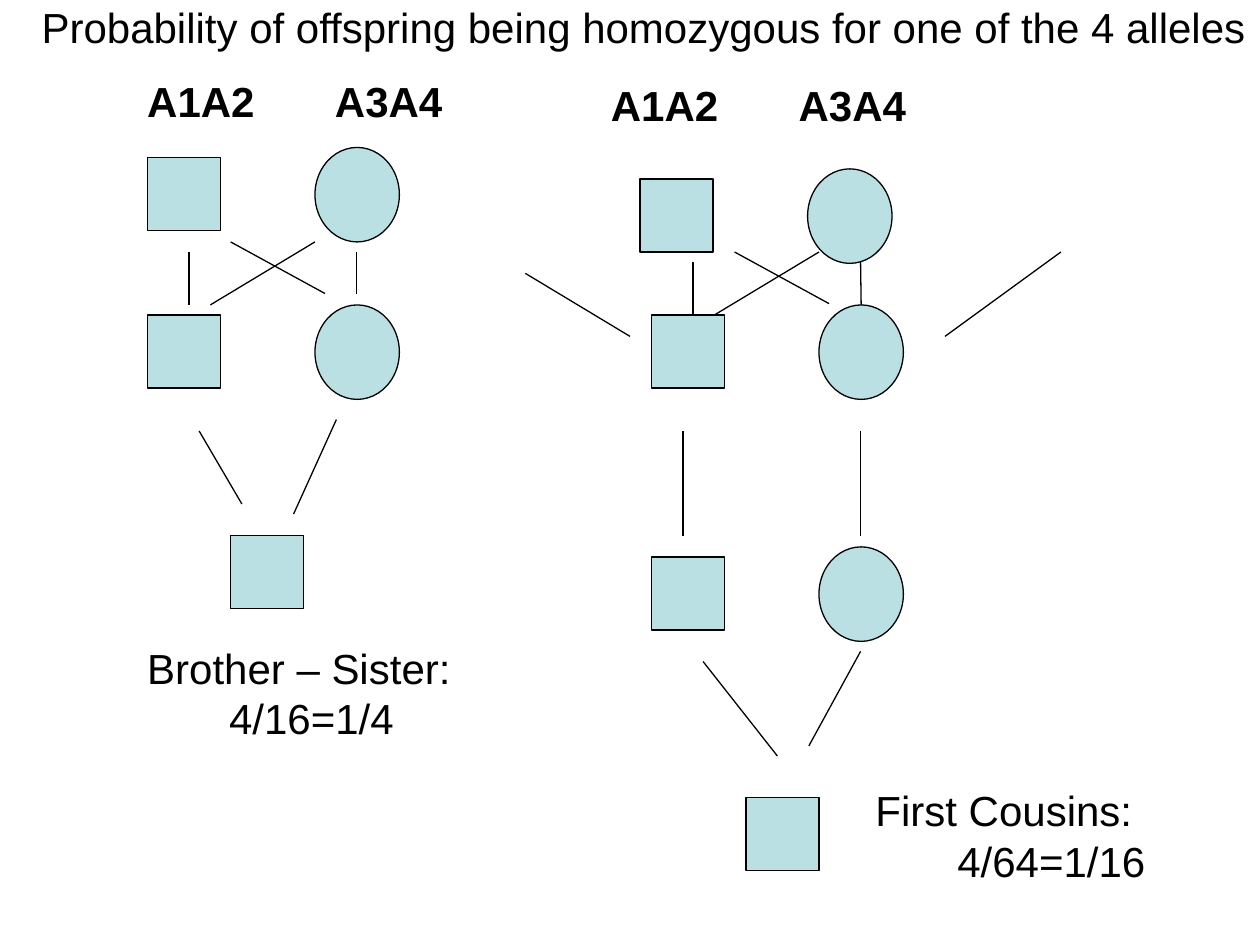
import pptx
import pptx.dml.color
import pptx.enum.shapes
import pptx.enum.text
import pptx.oxml
import pptx.oxml.ns
import pptx.util
from lxml import etree
from pptx.util import Inches

MSO = pptx.enum.shapes.MSO_SHAPE


def color(hex_code):
    return pptx.dml.color.RGBColor.from_string(hex_code)


def write(frame, *lines, bold=False, size=24, indent=0, tab=None, wrap=True):
    """Fill a frame; lines after the first are indented."""
    frame.word_wrap = wrap
    frame.auto_size = pptx.enum.text.MSO_AUTO_SIZE.NONE
    frame.vertical_anchor = pptx.enum.text.MSO_ANCHOR.TOP
    for number, line in enumerate(lines):
        paragraph = frame.paragraphs[0] if number == 0 else frame.add_paragraph()
        paragraph.text = line
        paragraph.alignment = pptx.enum.text.PP_ALIGN.LEFT
        properties = paragraph._p.get_or_add_pPr()
        if number and indent:
            properties.set("marL", str(Inches(indent)))
        if tab:
            stops = etree.SubElement(properties, pptx.oxml.ns.qn("a:tabLst"))
            etree.SubElement(stops, pptx.oxml.ns.qn("a:tab"),
                             pos=str(Inches(tab)), algn="l")
        paragraph.font.name = "Arial"
        paragraph.font.size = pptx.util.Pt(size)
        paragraph.font.bold = bold
        paragraph.font.color.rgb = color("000000")


class Pedigree:
    fill, ink, stroke = "BBE0E3", "000000", 0.75
    side = 0.58
    oval = (0.67, 0.75)

    def __init__(self, slide):
        self.slide = slide

    def outline(self, line):
        line.color.rgb = color(self.ink)
        line.width = pptx.util.Pt(self.stroke)

    def person(self, kind, x, y, width, height):
        person = self.slide.shapes.add_shape(
            kind, Inches(x), Inches(y), Inches(width), Inches(height))
        person.shadow.inherit = False
        person.fill.solid()
        person.fill.fore_color.rgb = color(self.fill)
        self.outline(person.line)
        return person

    def male(self, x, y):
        return self.person(MSO.RECTANGLE, x, y, self.side, self.side)

    def female(self, x, y):
        return self.person(MSO.OVAL, x, y, *self.oval)

    def couple(self, x, y):
        return self.male(x, y), self.female(x + 1.33, y - 0.08)

    def line(self, x1, y1, x2, y2):
        line = self.slide.shapes.add_connector(
            pptx.enum.shapes.MSO_CONNECTOR.STRAIGHT,
            Inches(x1), Inches(y1), Inches(x2), Inches(y2))
        self.outline(line.line)
        etree.SubElement(line._element.spPr, pptx.oxml.ns.qn("a:effectLst"))
        return line

    def descent(self, x, y):
        """Lines from two parents to two children; returns the mother-daughter one."""
        self.line(x, y, x, y + 0.42)
        self.line(x + 0.33, y - 0.08, x + 1.08, y + 0.33)
        self.line(x + 1, y - 0.08, x + 0.17, y + 0.42)
        return self.line(x + 1.33, y, x + 1.33, y + 0.33)

    def text(self, x, y, width, height, *lines, **style):
        box = self.slide.shapes.add_textbox(
            Inches(x), Inches(y), Inches(width), Inches(height))
        write(box.text_frame, *lines, **style)

    def genotypes(self, x, y):
        self.text(x, y, 2.8, 0.51, "A1A2\tA3A4", bold=True, tab=1.49)

    def title(self, x, y, width, height, text):
        title = self.slide.shapes.title
        title.left, title.top = Inches(x), Inches(y)
        title.width, title.height = Inches(width), Inches(height)
        write(title.text_frame, text, wrap=False)


def main():
    deck = pptx.Presentation()
    deck.slide_width, deck.slide_height = Inches(10), Inches(7.5)
    chart = Pedigree(deck.slides.add_slide(deck.slide_layouts[5]))
    chart.title(0.23, -0.04, 9.86, 0.51,
                "Probability of offspring being homozygous for one of the 4 alleles")

    # Brother and sister
    chart.genotypes(1.07, 0.55)
    chart.couple(1.17, 1.25)
    chart.couple(1.17, 2.5)
    chart.descent(1.5, 2)
    chart.line(1.58, 3.42, 1.92, 4)
    chart.line(2.67, 3.33, 2.33, 4.08)
    chart.male(1.83, 4.25)
    chart.text(1.07, 5.05, 2.8, 0.91, "Brother – Sister:", "4/16=1/4", indent=0.65)

    # First cousins: grandparents and their children
    chart.genotypes(4.75, 0.58)
    _, grandmother = chart.couple(5.08, 1.42)
    _, daughter = chart.couple(5.17, 2.5)
    chart.descent(5.5, 2.08).end_connect(daughter, 0)

    # First cousins: partners from outside, then the cousins
    chart.line(4.17, 2.17, 5, 2.67)
    chart.line(8.42, 2, 7.5, 2.67)
    chart.line(5.42, 3.42, 5.42, 4.25)
    chart.line(6.83, 3.42, 6.83, 4.25)
    chart.couple(5.17, 4.42)

    # First cousins: offspring
    chart.line(5.58, 5.25, 6.17, 6)
    chart.line(6.83, 5.17, 6.42, 5.92)
    chart.male(5.92, 6.33)
    chart.text(6.85, 6.18, 2.6, 0.91, "First Cousins:", "4/64=1/16", indent=0.65)

    deck.save("out.pptx")


if __name__ == "__main__":
    main()
